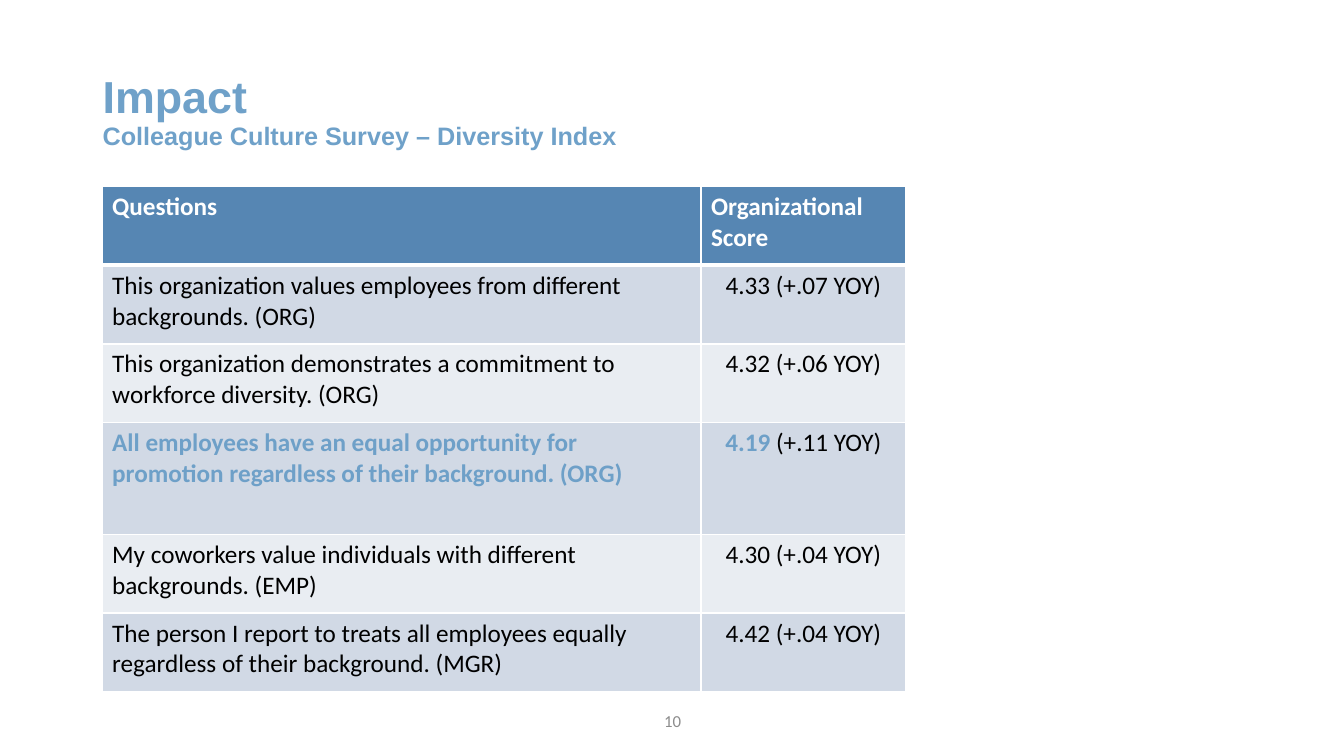
from dataclasses import dataclass

from lxml.etree import SubElement
from pptx import Presentation
from pptx.dml.color import RGBColor as Rgb
from pptx.enum.text import MSO_ANCHOR as Anchor, PP_ALIGN as Align
from pptx.oxml.ns import qn
from pptx.util import Inches, Pt


@dataclass(frozen=True)
class Theme:
    heading_font: str = "Arial"
    body_font: str = "Calibri"
    title_size: int = 32
    body_size: int = 18
    number_size: int = 12
    title: str = "6FA1C9"
    accent: str = "6EA0C8"
    header: str = "5686B3"
    bands: tuple = ("D1D9E5", "E9EDF2")
    ink: str = "000000"
    muted: str = "8C8C8C"
    white: str = "FFFFFF"
    thin: int = 1
    thick: int = 3


THEME = Theme()
WIDTH, HEIGHT = Inches(13.33), Inches(7.5)
COLUMNS = (5.94, 2.03)
ROWS = (0.78, 0.78, 0.78, 1.11, 0.78, 0.78)
HEADINGS = ("Questions", "Organizational Score")
HIGHLIGHT = 3
SCORES = (
    ("This organization values employees from different backgrounds. (ORG)", "4.33", "(+.07 YOY)"),
    ("This organization demonstrates a commitment to workforce diversity. (ORG)", "4.32", "(+.06 YOY)"),
    ("All employees have an equal opportunity for promotion regardless of their background. (ORG)",
     "4.19", "(+.11 YOY)"),
    ("My coworkers value individuals with different backgrounds. (EMP)", "4.30", "(+.04 YOY)"),
    ("The person I report to treats all employees equally regardless of their background. (MGR)",
     "4.42", "(+.04 YOY)"),
)


def share(left, top, width, height):
    return [round(part * whole) for part, whole in
            zip((left, top, width, height), (WIDTH, HEIGHT, WIDTH, HEIGHT))]


def style(span, font, size, color, bold=False):
    span.font.name = font
    span.font.size = Pt(size)
    span.font.bold = bold
    span.font.color.rgb = Rgb.from_string(color)


def add_text(page, area, text):
    frame = page.shapes.add_textbox(*area).text_frame
    frame.word_wrap = True
    frame.vertical_anchor = Anchor.MIDDLE
    para = frame.paragraphs[0]
    para.text = text
    return para


def add_title(page):
    para = add_text(page, share(0.069, 0.053, 0.863, 0.193),
                    "Impact\vColleague Culture Survey – Diversity Index")
    para.line_spacing = 0.9
    for span, size in zip(para.runs, (THEME.title_size, THEME.body_size)):
        style(span, THEME.heading_font, size, THEME.title, True)


def add_page_number(page):
    para = add_text(page, share(0.388, 0.927, 0.225, 0.053), "10")
    para.alignment = Align.CENTER
    style(para.runs[0], THEME.body_font, THEME.number_size, THEME.muted)


def add_borders(cell, row):
    widths = {"L": THEME.thin, "R": THEME.thin,
              "T": THEME.thick if row == 1 else THEME.thin,
              "B": THEME.thick if row == 0 else THEME.thin}
    properties = cell._tc.get_or_add_tcPr()
    for side, width in widths.items():
        line = SubElement(properties, qn(f"a:ln{side}"), w=str(Pt(width)))
        fill = SubElement(line, qn("a:solidFill"))
        SubElement(fill, qn("a:srgbClr"), val=THEME.white)


def fill_cell(cell, row, fill, parts, align=Align.LEFT):
    add_borders(cell, row)
    cell.fill.solid()
    cell.fill.fore_color.rgb = Rgb.from_string(fill)
    para = cell.text_frame.paragraphs[0]
    para.alignment = align
    for text, color, bold in parts:
        span = para.add_run()
        span.text = text
        style(span, THEME.body_font, THEME.body_size, color, bold)


def add_score_table(page):
    area = share(0.076, 0.247, sum(COLUMNS) / 13.33, sum(ROWS) / 7.5)
    table = page.shapes.add_table(len(ROWS), len(COLUMNS), *area).table
    for column, width in zip(table.columns, COLUMNS):
        column.width = Inches(width)
    for row, height in zip(table.rows, ROWS):
        row.height = Inches(height)
    for column, heading in enumerate(HEADINGS):
        fill_cell(table.cell(0, column), 0, THEME.header, [(heading, THEME.white, True)])
    for row, (question, score, change) in enumerate(SCORES, 1):
        bold = row == HIGHLIGHT
        color = THEME.accent if bold else THEME.ink
        band = THEME.bands[(row - 1) % 2]
        fill_cell(table.cell(row, 0), row, band, [(question, color, bold)])
        fill_cell(table.cell(row, 1), row, band,
                  [(f"{score} ", color, bold), (change, THEME.ink, False)], Align.CENTER)


def main():
    deck = Presentation()
    deck.slide_width, deck.slide_height = WIDTH, HEIGHT
    page = deck.slides.add_slide(deck.slide_layouts[6])
    add_title(page)
    add_page_number(page)
    add_score_table(page)
    deck.save("out.pptx")


if __name__ == "__main__":
    main()
